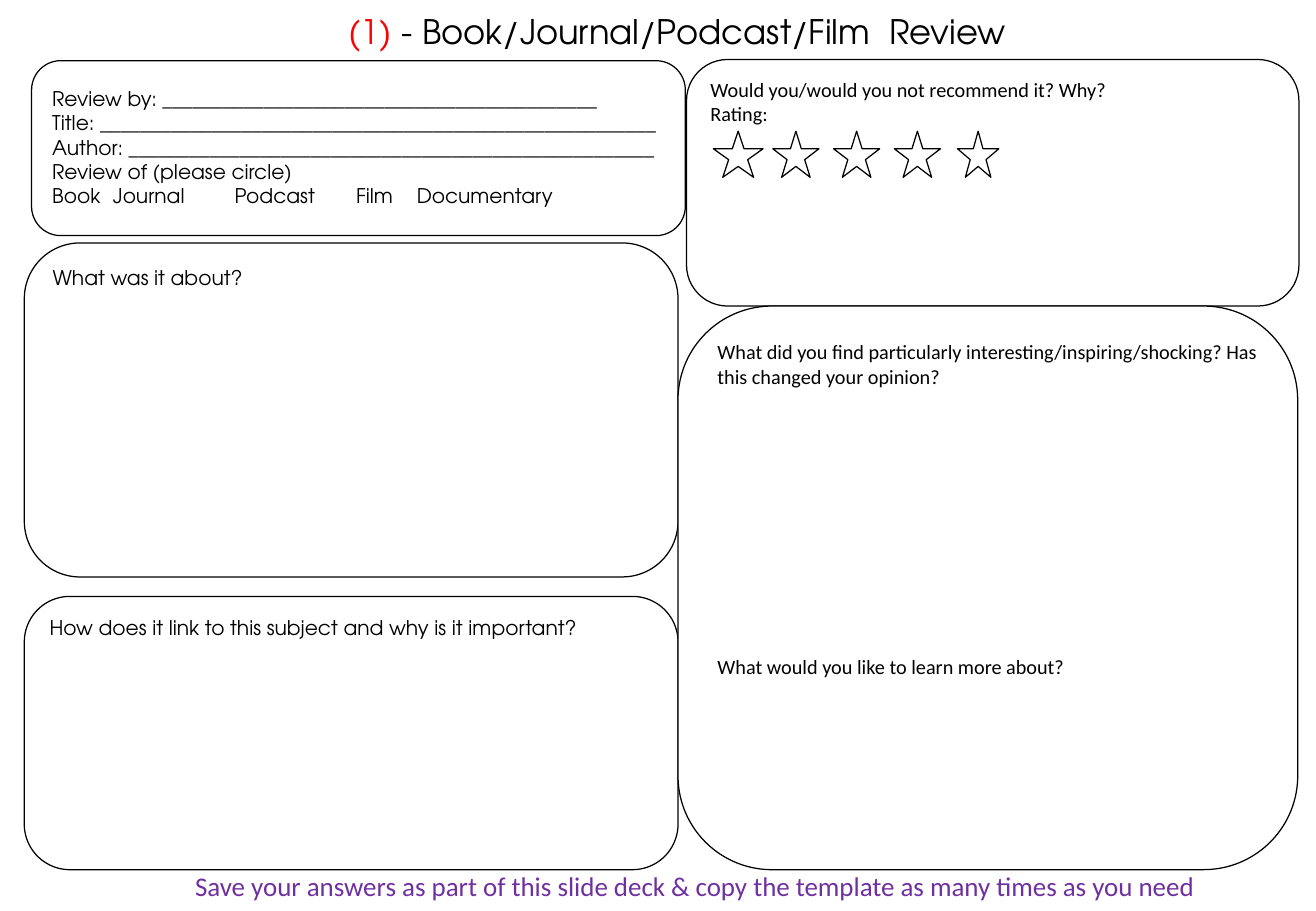
from typing import NamedTuple

from pptx import Presentation
from pptx.dml.color import RGBColor
from pptx.enum.shapes import MSO_SHAPE as Kind
from pptx.enum.text import MSO_ANCHOR as Anchor, MSO_AUTO_SIZE as Fit, PP_ALIGN as Align
from pptx.oxml.ns import qn
from pptx.util import Pt
from lxml.etree import SubElement

PX = 9144  # one px is a hundredth of an inch
BLACK = RGBColor(0, 0, 0)
WHITE = RGBColor(255, 255, 255)
RED = RGBColor(255, 0, 0)
PURPLE = RGBColor(0x70, 0x30, 0xA0)
SANS = "Calibri"
ROUND = "TeX Gyre Adventor"


class Box(NamedTuple):
    left: int
    top: int
    width: int
    height: int


class Card(NamedTuple):
    box: Box
    lines: tuple[str, ...] = ()
    font: str = SANS
    gap: int = 0  # points before each later line


CARDS = (
    Card(Box(565, 49, 504, 203),
         ("Would you/would you not recommend it? Why?", "Rating:")),
    Card(Box(20, 491, 538, 225),
         ("How does it link to this subject and why is it important?",), ROUND),
    Card(Box(20, 200, 538, 275), ("What was it about?",), ROUND),
    Card(Box(558, 252, 510, 464),
         ("What did you find particularly interesting/inspiring/shocking? "
          "Has this changed your opinion?",
          "What would you like to learn more about?"), gap=158),
)
FRAME = Box(26, 50, 538, 144)
STARS = ((587, 41), (636, 38), (686, 38), (736, 38), (788, 34))  # left, width
FIELDS = (
    "Review by: " + "_" * 43,
    "Title: " + "_" * 55,
    "Author: " + "_" * 52,
    "Review of (please circle)",
    "Book\tJournal\tPodcast\tFilm\tDocumentary",
)
TABS = (67, 153, 266, 337)


def scale(box: Box) -> list[int]:
    return [n * PX for n in box]


def place(shape, box: Box) -> None:
    shape.left, shape.top, shape.width, shape.height = scale(box)


def style(par, font: str, size: int, color: RGBColor) -> None:
    par.font.name = font
    par.font.size = Pt(size)
    par.font.color.rgb = color


def draw(slide, kind: Kind, box: Box, filled: bool = True):
    """Add a thinly outlined shape, white or see-through."""
    shape = slide.shapes.add_shape(kind, *scale(box))
    shape.shadow.inherit = False
    if filled:
        shape.fill.solid()
        shape.fill.fore_color.rgb = WHITE
    else:
        shape.fill.background()
    shape.line.color.rgb = BLACK
    shape.line.width = Pt(0.75)
    return shape


def add_card(slide, card: Card) -> None:
    frame = draw(slide, Kind.FLOWCHART_ALTERNATE_PROCESS, card.box).text_frame
    frame.word_wrap = True
    frame.vertical_anchor = Anchor.TOP
    for i, line in enumerate(card.lines):
        par = frame.paragraphs[0] if i == 0 else frame.add_paragraph()
        par.text = line
        par.alignment = Align.LEFT
        par.space_before = Pt(card.gap if i else 0)
        style(par, card.font, 12, BLACK)


def set_title(title) -> None:
    place(title, Box(250, 4, 615, 40))
    frame = title.text_frame
    frame.auto_size = Fit.NONE
    frame.vertical_anchor = Anchor.TOP
    par = frame.paragraphs[0]
    par.alignment = Align.CENTER
    style(par, ROUND, 20, BLACK)
    for text, color in (("(1)", RED), (" - Book/Journal/Podcast/Film  Review", BLACK)):
        run = par.add_run()
        run.text = text
        run.font.color.rgb = color


def set_form(body) -> None:
    """Fill the body with the review fields, unbulleted, with tabbed choices."""
    place(body, Box(33, 66, 525, 103))
    frame = body.text_frame
    frame.auto_size = Fit.NONE
    frame.vertical_anchor = Anchor.TOP
    for i, line in enumerate(FIELDS):
        par = frame.paragraphs[0] if i == 0 else frame.add_paragraph()
        par.text = line
        par.space_before = Pt(0)
        props = par._p.get_or_add_pPr()
        props.set("marL", "0")
        props.set("indent", "0")
        SubElement(props, qn("a:buNone"))
        if "\t" in line:
            stops = SubElement(props, qn("a:tabLst"))
            for pos in TABS:
                SubElement(stops, qn("a:tab"), pos=str(pos * PX), algn="l")
        style(par, ROUND, 12, BLACK)


def add_footer(slide) -> None:
    frame = slide.shapes.add_textbox(*scale(Box(33, 711, 1083, 37))).text_frame
    frame.word_wrap = True
    par = frame.paragraphs[0]
    par.text = ("Save your answers as part of this slide deck "
                "& copy the template as many times as you need ")
    par.alignment = Align.CENTER
    style(par, SANS, 16, PURPLE)


def main() -> None:
    deck = Presentation()
    deck.slide_width, deck.slide_height = 1083 * PX, 750 * PX
    slide = deck.slides.add_slide(deck.slide_layouts[1])
    set_title(slide.shapes.title)
    set_form(slide.placeholders[1])
    for card in CARDS:
        add_card(slide, card)
    draw(slide, Kind.FLOWCHART_ALTERNATE_PROCESS, FRAME, filled=False)
    for left, width in STARS:
        draw(slide, Kind.STAR_5_POINT, Box(left, 108, width, 38))
    add_footer(slide)
    deck.save("out.pptx")


if __name__ == "__main__":
    main()
